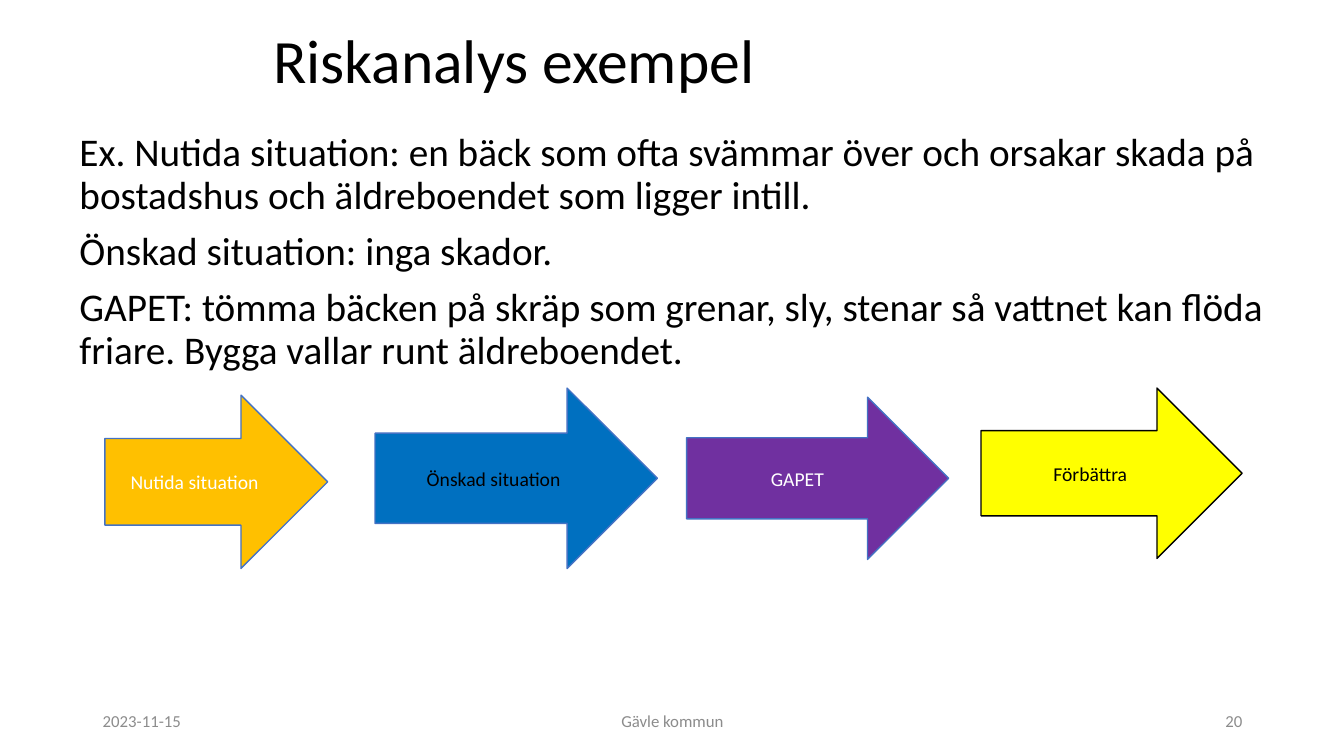
from dataclasses import dataclass

from pptx import Presentation
from pptx.dml.color import RGBColor
from pptx.enum.shapes import MSO_SHAPE as Shape
from pptx.enum.text import MSO_ANCHOR as Anchor, PP_ALIGN as Align
from pptx.util import Inches, Pt


@dataclass(frozen=True)
class Theme:
    """Font, colours and type sizes of the deck."""
    font: str = "Calibri"
    black: str = "000000"
    white: str = "FFFFFF"
    grey: str = "8C8C8C"
    outline: str = "4472C4"
    orange: str = "FFC000"
    blue: str = "0070C0"
    purple: str = "7030A0"
    yellow: str = "FFFF00"
    title: int = 44
    body: int = 28
    label: int = 14
    footer: int = 12


THEME = Theme()

BODY = (
    "Ex. Nutida situation: en bäck som ofta svämmar över och orsakar skada på "
    "bostadshus och äldreboendet som ligger intill.",
    "Önskad situation: inga skador.",
    "GAPET: tömma bäcken på skräp som grenar, sly, stenar så vattnet kan flöda "
    "friare. Bygga vallar runt äldreboendet.",
)

ARROWS = (
    ("Nutida situation", (0, 0.07, 2.21, 1.72), THEME.orange, THEME.outline, THEME.white),
    ("Önskad situation", (2.68, 0, 2.8, 1.79), THEME.blue, THEME.outline, THEME.black),
    ("GAPET", (5.77, 0.09, 2.6, 1.61), THEME.purple, THEME.outline, THEME.white),
    ("Förbättra", (8.69, 0, 2.59, 1.69), THEME.yellow, THEME.black, THEME.black),
)


def write(box, *texts, size, color=THEME.black, align=Align.LEFT,
          anchor=Anchor.MIDDLE, line_spacing=1.0, space_before=0):
    """Fill a shape with one formatted paragraph per text."""
    frame = box.text_frame
    frame.word_wrap = True
    frame.vertical_anchor = anchor
    for index, text in enumerate(texts):
        para = frame.add_paragraph() if index else frame.paragraphs[0]
        para.alignment = align
        para.line_spacing = line_spacing
        para.space_before = Pt(space_before)
        span = para.add_run()
        span.text = text
        span.font.name = THEME.font
        span.font.size = Pt(size)
        span.font.color.rgb = RGBColor.from_string(color)


def add_text(page, area, *texts, **text_format):
    """Place a text box in the given area."""
    box = page.shapes.add_textbox(*map(Inches, area))
    write(box, *texts, **text_format)


def add_arrows(page, left, top):
    """Draw the row of labelled arrows from its top left corner."""
    for label, (dx, dy, width, height), fill, line, color in ARROWS:
        area = (left + dx, top + dy, width, height)
        arrow = page.shapes.add_shape(Shape.RIGHT_ARROW, *map(Inches, area))
        arrow.shadow.inherit = False
        arrow.fill.solid()
        arrow.fill.fore_color.rgb = RGBColor.from_string(fill)
        arrow.line.color.rgb = RGBColor.from_string(line)
        arrow.line.width = Pt(1)
        write(arrow, label, size=THEME.label, color=color, align=Align.CENTER)


def add_footer(page, left, top, width, height):
    """Place date, organisation and page number along the footer."""
    side, middle = 3, 4.5
    parts = (
        ("2023-11-15", left, side, Align.LEFT),
        ("Gävle kommun", left + (width - middle) / 2, middle, Align.CENTER),
        ("20", left + width - side, side, Align.RIGHT),
    )
    for text, part_left, part_width, align in parts:
        add_text(page, (part_left, top, part_width, height), text,
                 size=THEME.footer, color=THEME.grey, align=align)


def main():
    """Build the risk analysis slide and save it."""
    deck = Presentation()
    deck.slide_width, deck.slide_height = Inches(13.33), Inches(7.5)
    page = deck.slides.add_slide(deck.slide_layouts[6])
    add_text(page, (2.61, 0.16, 9.26, 0.94), "Riskanalys exempel",
             size=THEME.title, line_spacing=0.9)
    add_text(page, (0.69, 1.27, 11.96, 3.51), *BODY, size=THEME.body,
             anchor=Anchor.TOP, line_spacing=0.9, space_before=10)
    add_footer(page, 0.92, 6.95, 11.5, 0.4)
    add_arrows(page, 1.04, 3.85)
    deck.save("out.pptx")


if __name__ == "__main__":
    main()
